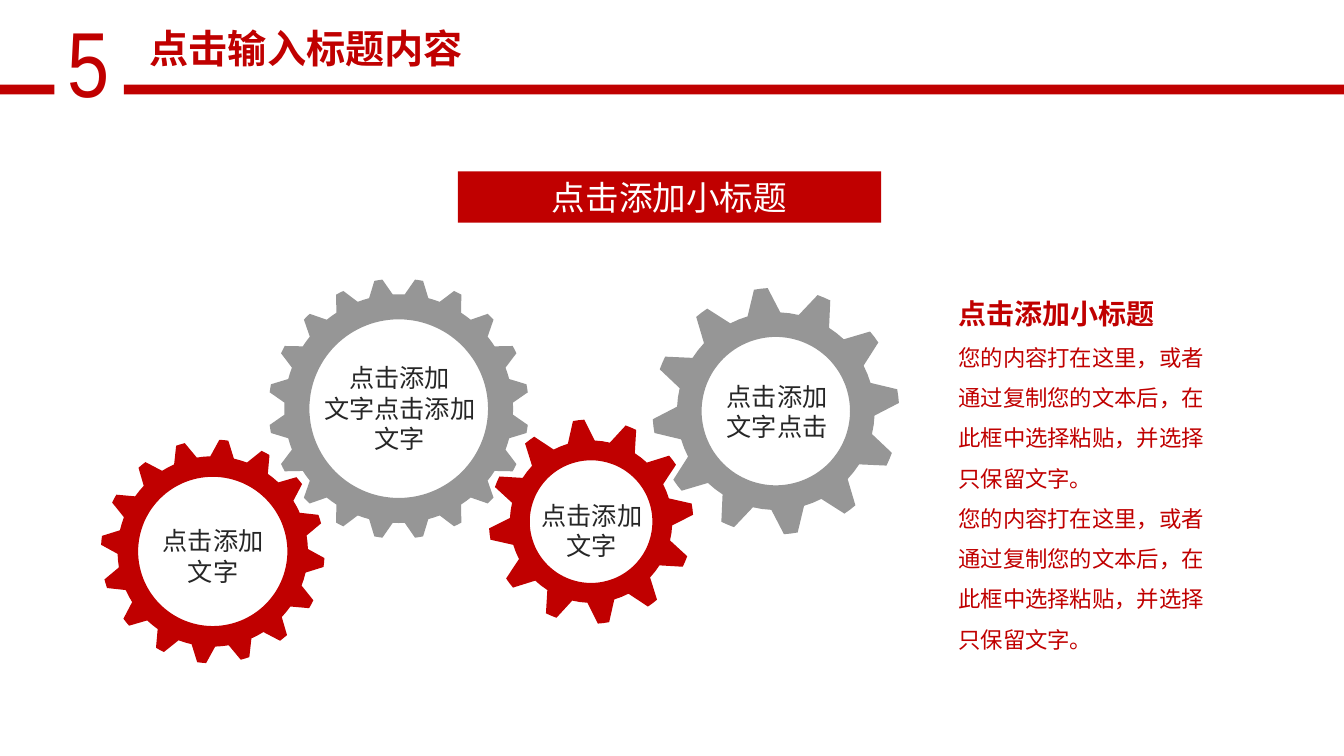
from math import sin, cos, radians
from lxml.etree import SubElement
from pptx import Presentation
from pptx.util import Pt
from pptx.dml.color import RGBColor
from pptx.enum.shapes import MSO_SHAPE
from pptx.enum.text import PP_ALIGN, MSO_ANCHOR
from pptx.oxml.ns import qn

HEX = {"red": "C00000", "gray": "969696", "ink": "262626", "white": "FFFFFF"}
SANS = "Noto Sans CJK SC"

deck = Presentation()
deck.slide_width, deck.slide_height = Pt(960), Pt(540)
slide = deck.slides.add_slide(deck.slide_layouts[6])
shapes = slide.shapes


def paint(shape, color):
    shape.shadow.inherit = False
    shape.fill.solid()
    shape.fill.fore_color.rgb = RGBColor.from_string(HEX[color])
    shape.line.fill.background()


def write(text, box=None, shape=None, size=18, color="ink", face=SANS, bold=False,
          align=PP_ALIGN.CENTER, anchor=MSO_ANCHOR.TOP, space=1.0, head=None):
    shape = shape or shapes.add_textbox(*[Pt(v) for v in box])
    frame = shape.text_frame
    frame.word_wrap = True
    frame.vertical_anchor = anchor
    for i, line in enumerate(text.split("\n")):
        para = frame.paragraphs[0] if i == 0 else frame.add_paragraph()
        para.alignment = align
        para.line_spacing = space
        run = para.add_run()
        run.text = line
        top = head and i == 0
        font = run.font
        font.size = Pt(head if top else size)
        font.bold = bool(bold or top)
        font.color.rgb = RGBColor.from_string(HEX[color])
        font.name = face
        SubElement(font._element, qn("a:ea"), typeface=face)


write("5", (41, 0, 24.5, 87), size=66, color="red", face="Arial Narrow", align=PP_ALIGN.LEFT)
for left, width in ((88.5, 871.5), (-2, 41)):
    bar = shapes.add_shape(MSO_SHAPE.RECTANGLE, Pt(left), Pt(60.4), Pt(width), Pt(7))
    paint(bar, "red")

gears = [
    (284.8, 291.9, 92.9, 81.7, 63.8, 20, 9, 1.8, 3, "gray"),
    (422.2, 372.6, 73, 58, 43.8, 12, -7, 3.2, 5.4, "red"),
    (152, 393.9, 79.9, 68, 53.3, 16, 5.7, 2.3, 4.1, "red"),
    (554.2, 293.7, 88.1, 70.6, 53, 12, -7, 3.2, 5.4, "gray"),
]
for x, y, tip, root, hole, teeth, start, crest, dip, color in gears:
    step = 360 / teeth
    rim = []
    for n in range(teeth):
        mid = start + n * step
        rim += [(tip, mid + a) for a in (-crest, 0, crest)]
        rim += [(root, mid + step / 2 + a) for a in (-dip, 0, dip)]
    ring = [(hole, -3 * n) for n in range(120)]
    rim, ring = [[(Pt(x + r * sin(radians(a))), Pt(y - r * cos(radians(a)))) for r, a in part]
                 for part in (rim, ring)]
    form = shapes.build_freeform(*rim[0], scale=1.0)
    form.add_line_segments(rim[1:], close=True)
    form.move_to(*ring[0])
    form.add_line_segments(ring[1:], close=True)
    paint(form.convert_to_shape(), color)

labels = [
    ("点击添加\n文字", (108, 371.5, 88.6, 51)),
    ("点击添加\n文字点击添加\n文字", (222.5, 255, 126, 72.7)),
    ("点击添加\n文字", (378.5, 353.5, 88.6, 51)),
    ("点击添加\n文字点击", (492, 268.5, 126, 51)),
]
for text, box in labels:
    write(text, box, anchor=MSO_ANCHOR.MIDDLE)

note = "您的内容打在这里，或者通过复制您的文本后，在此框中选择粘贴，并选择只保留文字。"
write("\n".join(["点击添加小标题", note, note]), (677.5, 196.5, 204, 276.5),
      size=16, color="red", align=PP_ALIGN.LEFT, space=1.5, head=20)

band = shapes.add_shape(MSO_SHAPE.RECTANGLE, Pt(327), Pt(122.5), Pt(302.4), Pt(36.5))
paint(band, "red")
write("点击添加小标题", shape=band, size=24, color="white", anchor=MSO_ANCHOR.MIDDLE)
write("点击输入标题内容", (89.5, 13.7, 258.5, 41), size=28, color="red", bold=True)

deck.save("out.pptx")
